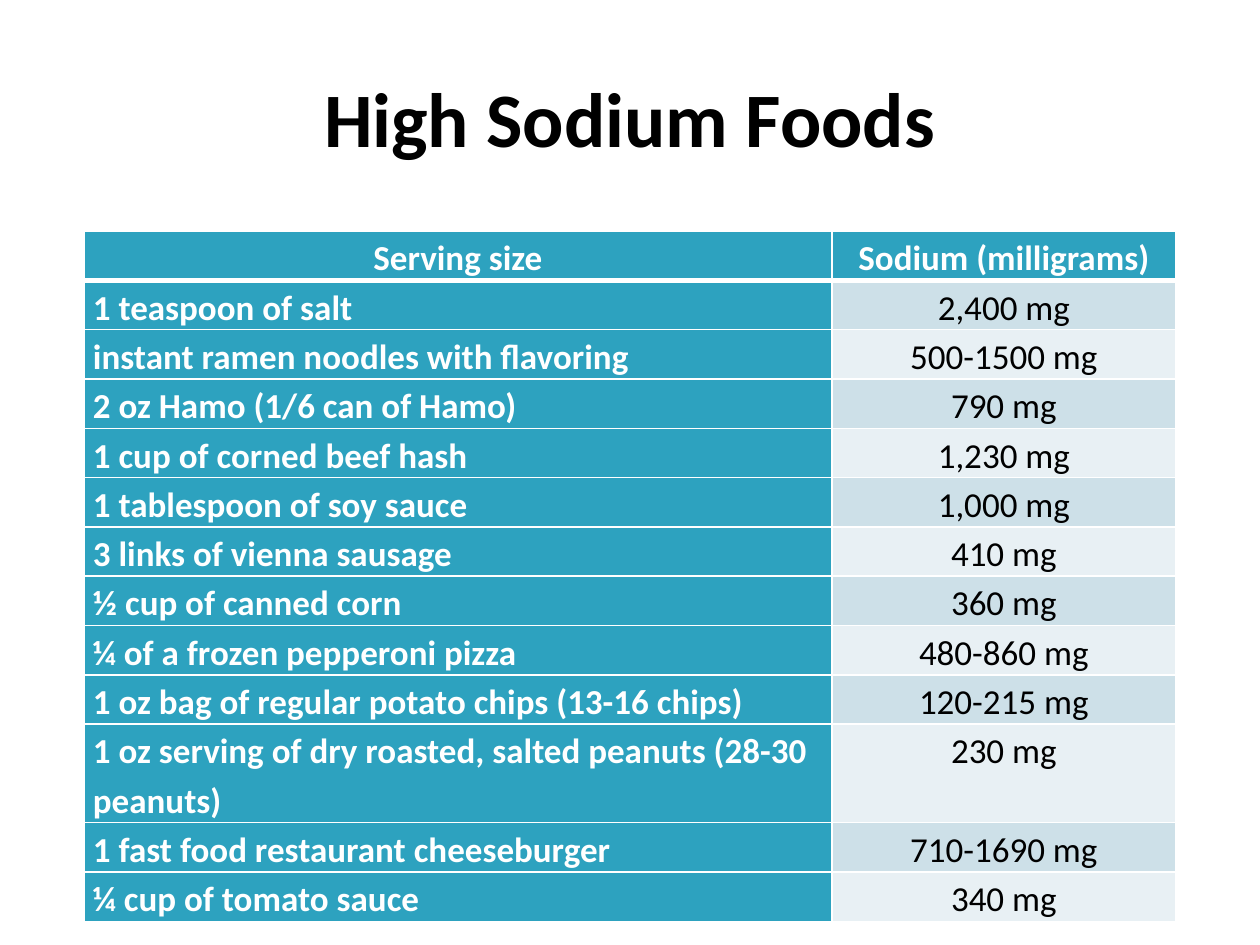
from lxml import etree
from pptx import Presentation
from pptx.dml.color import RGBColor
from pptx.enum.text import MSO_ANCHOR, PP_ALIGN
from pptx.oxml.ns import qn
from pptx.util import Emu, Pt

CENTER, LEFT = PP_ALIGN.CENTER, PP_ALIGN.LEFT
MIDDLE = MSO_ANCHOR.MIDDLE
WHITE, BLACK, TEAL = "FFFFFF", "000000", "2DA2BF"
BANDS = ("E8F0F4", "CDE0E8")
COL_WIDTHS = (748, 344)
ROW_HEIGHT, TALL_ROW_HEIGHT, TALL_ROW = 45, 94, 10
FOODS = [
    ("Serving size", "Sodium (milligrams)"),
    ("1 teaspoon of salt", "2,400 mg"),
    ("instant ramen noodles with flavoring", "500-1500 mg"),
    ("2 oz Hamo (1/6 can of Hamo)", "790 mg"),
    ("1 cup of corned beef hash", "1,230 mg"),
    ("1 tablespoon of soy sauce", "1,000 mg"),
    ("3 links of vienna sausage", "410 mg"),
    ("½ cup of canned corn", "360 mg"),
    ("¼ of a frozen pepperoni pizza", "480-860 mg"),
    ("1 oz bag of regular potato chips (13-16 chips)", "120-215 mg"),
    ("1 oz serving of dry roasted, salted peanuts (28-30 peanuts)", "230 mg"),
    ("1 fast food restaurant cheeseburger", "710-1690 mg"),
    ("¼ cup of tomato sauce", "340 mg"),
]


def px(n):
    """Turn px into EMU at 126 px to the inch."""
    return Emu(round(n * 914400 / 126))


def rgb(value):
    """Turn a hex string into a colour."""
    return RGBColor.from_string(value)


def set_attrs(obj, values):
    """Set each attribute named in a dict."""
    for name, value in values.items():
        setattr(obj, name, value)


def write(tf, text, size, color, bold, align, spacing=1.0):
    """Write one formatted paragraph into a text frame."""
    p = tf.paragraphs[0]
    set_attrs(p, {"alignment": align, "line_spacing": spacing})
    r = p.add_run()
    r.text = text
    set_attrs(r.font, {"name": "Calibri", "size": Pt(size), "bold": bold})
    r.font.color.rgb = rgb(color)


def set_borders(cell, widths):
    """Draw white cell borders with the point width given for each side."""
    tc_pr = cell._tc.get_or_add_tcPr()
    for side, width in widths.items():
        ln = etree.SubElement(tc_pr, qn(f"a:ln{side}"), w=str(Pt(width)))
        fill = etree.SubElement(ln, qn("a:solidFill"))
        etree.SubElement(fill, qn("a:srgbClr"), val=WHITE)


def add_title(s, x, y, w, h):
    """Place the slide title in its box."""
    sp = s.shapes.title
    set_attrs(sp, {"left": px(x), "top": px(y), "width": px(w), "height": px(h)})
    tf = sp.text_frame
    set_attrs(tf, {"vertical_anchor": MIDDLE, "word_wrap": True})
    write(tf, "High Sodium Foods", 44, BLACK, True, CENTER)


def fill_cell(cell, text, row, col):
    """Format and fill one cell by its place in the table."""
    set_attrs(cell, {"margin_left": px(9), "margin_right": px(9),
                     "margin_top": 0, "margin_bottom": 0})
    set_borders(cell, {"L": 1, "R": 1, "T": 3 if row == 1 else 1,
                       "B": 3 if row == 0 else 1})
    heading = row == 0 or col == 0
    cell.fill.solid()
    cell.fill.fore_color.rgb = rgb(TEAL if heading else BANDS[row % 2])
    align = LEFT if row and col == 0 else CENTER
    write(cell.text_frame, text, 20, WHITE if heading else BLACK, heading, align, 1.15)


def add_food_table(s, x, y, w, h):
    """Place the table of foods and their sodium content."""
    table = s.shapes.add_table(len(FOODS), len(COL_WIDTHS),
                               px(x), px(y), px(w), px(h)).table
    table.first_col = True
    for column, width in zip(table.columns, COL_WIDTHS):
        column.width = px(width)
    for i, texts in enumerate(FOODS):
        table.rows[i].height = px(TALL_ROW_HEIGHT if i == TALL_ROW else ROW_HEIGHT)
        for j, text in enumerate(texts):
            fill_cell(table.cell(i, j), text, i, j)


def main():
    """Build and save the slide."""
    prs = Presentation()
    set_attrs(prs, {"slide_width": px(1260), "slide_height": px(945)})
    s = prs.slides.add_slide(prs.slide_layouts[5])
    add_title(s, 63, 38, 1134, 158)
    add_food_table(s, 84, 231, sum(COL_WIDTHS), 634)
    prs.save("out.pptx")


if __name__ == "__main__":
    main()
